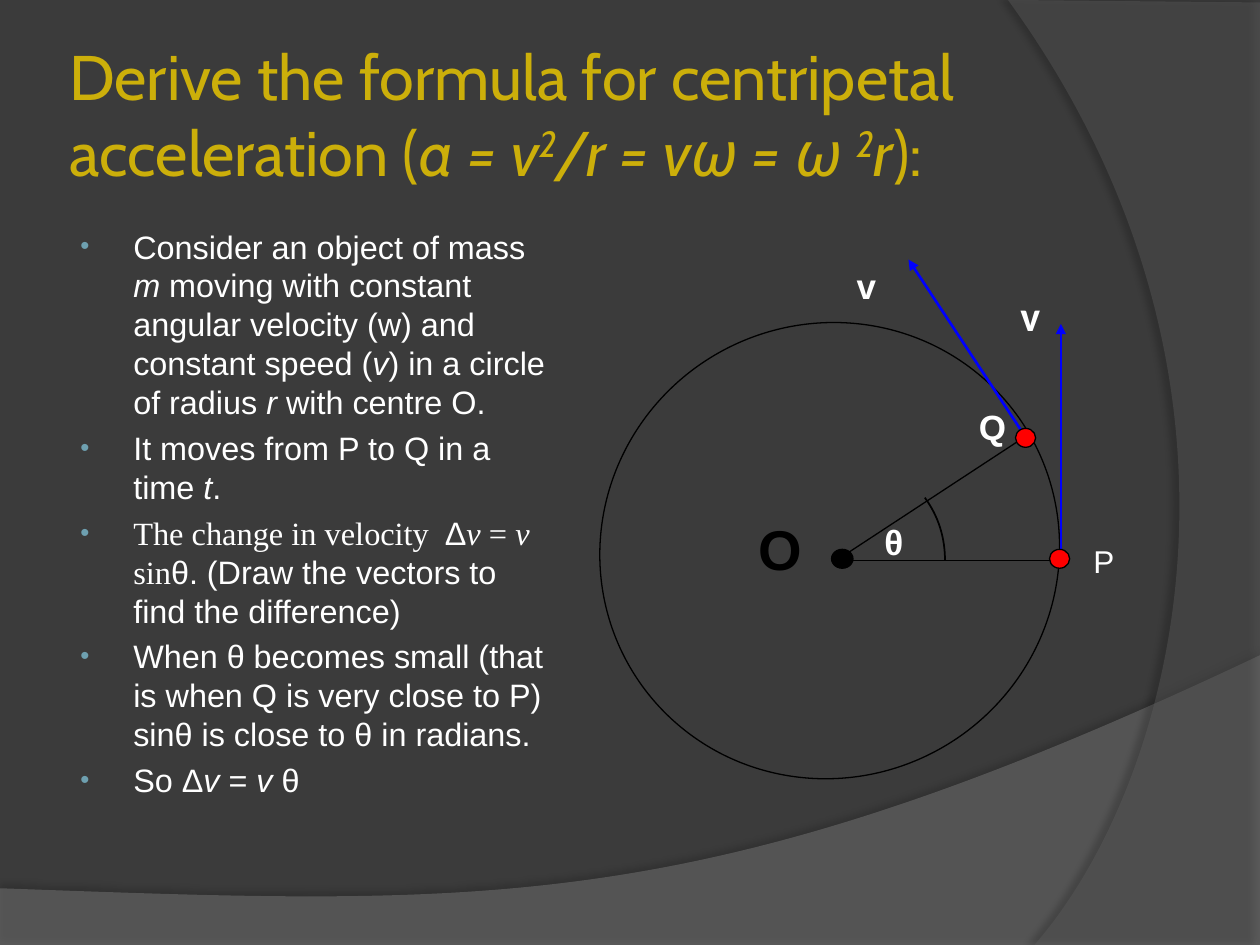
import dataclasses

import lxml.etree
import pptx
import pptx.dml.color
import pptx.enum.shapes
import pptx.enum.text
import pptx.oxml.ns
import pptx.util

Inches = pptx.util.Inches
Pt = pptx.util.Pt
RGBColor = pptx.dml.color.RGBColor

CHARCOAL = RGBColor(0x3B, 0x3B, 0x3B)
WAVE_GREY = RGBColor(0x7F, 0x7F, 0x7F)
SWEEP_GREY = RGBColor(0x5E, 0x5E, 0x5E)
GOLD = RGBColor(0xCC, 0xAF, 0x0A)
TEAL = RGBColor(0x6E, 0xA0, 0xB0)
WHITE = RGBColor(0xFF, 0xFF, 0xFF)
BLACK = RGBColor(0, 0, 0)
BLUE = RGBColor(0, 0, 0xFF)
RED = RGBColor(0xFF, 0, 0)

SANS, SERIF = "Arial", "Times New Roman"
TITLE = [
    ("Derive the formula for centripetal acceleration (", ""),
    ("a = v", "i"), ("2", "i^"), ("/r = vω = ω ", "i"), ("2", "i^"), ("r", "i"), ("):", ""),
]
BULLETS = [
    [("Consider an object of mass ", ""), ("m", "i"),
     (" moving with constant angular velocity (w) and constant speed (", ""), ("v", "i"),
     (") in a circle of radius ", ""), ("r", "i"), (" with centre O.", "")],
    [("It moves from P to Q in a time ", ""), ("t", "i"), (".", "")],
    [("The change in velocity  ", "s"), ("Δ", ""), ("v", "si"), (" = ", "s"), ("v ", "si"),
     ("sin", "s"), ("θ. (Draw the vectors to find the difference)", "")],
    [("When θ becomes small (that is when Q is very close to P) "
      "sinθ is close to θ in radians.", "")],
    [("So Δ", ""), ("v", "i"), (" = ", ""), ("v ", "i"), ("θ", "")],
]


@dataclasses.dataclass
class Box:
    """A region of the slide, in inches."""
    left: float
    top: float
    width: float
    height: float

    def point(self, x, y):
        """Return the slide position of an offset inside the region."""
        return Inches(self.left + x), Inches(self.top + y)

    def inner(self, x, y, width, height):
        """Return position and size of a part of the region."""
        return (*self.point(x, y), Inches(width), Inches(height))


def add_child(parent, tag, **attributes):
    """Append a DrawingML element to its parent."""
    return lxml.etree.SubElement(parent, pptx.oxml.ns.qn(tag), attributes)


def add_outline(shapes, box, corners, controls, close=True, pivot=None):
    """Draw a freeform whose last segment is a cubic curve; a pivot widens its frame."""
    builder = shapes.build_freeform(*box.point(*(pivot or corners[0])))
    if pivot:
        builder.move_to(*box.point(*corners[0]))
    builder.add_line_segments([box.point(*corner) for corner in corners[1:]], close=close)
    shape = builder.convert_to_shape()
    shape.shadow.inherit = False
    segment = shape._element.findall(".//" + pptx.oxml.ns.qn("a:lnTo"))[-1]
    segment.tag = pptx.oxml.ns.qn("a:cubicBezTo")
    for index, control in enumerate(controls):
        x, y = box.point(*control)
        knot = add_child(segment, "a:pt", x=str(x - shape.left), y=str(y - shape.top))
        segment.insert(index, knot)
    return shape


def add_band(page, box, corners, controls, colour, opacity, shadow_opacity, distance, direction):
    """Draw a translucent band with a soft shadow."""
    band = add_outline(page.shapes, box, corners, controls)
    band.line.fill.background()
    band.fill.solid()
    band.fill.fore_color.rgb = colour
    properties = band._element.spPr
    fill = properties.find(".//" + pptx.oxml.ns.qn("a:srgbClr"))
    add_child(fill, "a:alpha", val=str(opacity * 1000))
    effects = properties.find(pptx.oxml.ns.qn("a:effectLst"))
    shadow = add_child(effects, "a:outerShdw", blurRad=str(Pt(4)), dist=str(Pt(distance)),
                       dir=str(direction * 60000), algn="ctr", rotWithShape="0")
    shade = add_child(shadow, "a:srgbClr", val=str(BLACK))
    add_child(shade, "a:alpha", val=str(shadow_opacity * 1000))


def add_backdrop(page, box):
    """Draw the background with its wave and its sweep."""
    page.background.fill.solid()
    page.background.fill.fore_color.rgb = CHARCOAL
    add_band(page, Box(box.left, box.top + 5.2, box.width, 2.31),
             [(0, 1.85), (0, 2.31), (10, 2.31), (10, 0), (0, 1.85)],
             [(5.59, 2.09), (3.91, 1.99)], WAVE_GREY, 45, 35, 3.5, 270)
    add_band(page, Box(box.left + 8, box.top, 2, box.height),
             [(0, 0), (2, 0.02), (2, 7.5), (0.21, 7.5), (0, 0)],
             [(1.35, 6.19), (2.18, 3)], SWEEP_GREY, 40, 45, 4, 180)


def add_run(para, text, font, size, colour, bold=False, marks=""):
    """Add a run; marks are i for italic, s for serif, ^ for superscript."""
    span = para.add_run()
    span.text = text
    span.font.name = SERIF if "s" in marks else font
    span.font.size = Pt(size)
    span.font.color.rgb = colour
    span.font.bold = bold
    span.font.italic = "i" in marks
    if "^" in marks:
        span._r.get_or_add_rPr().set("baseline", "30000")


def add_title(page, box):
    """Place and fill the title above the backdrop."""
    title = page.shapes.title
    page.shapes._spTree.append(title._element)
    title.left, title.top, title.width, title.height = box.inner(0, 0, box.width, box.height)
    frame = title.text_frame
    frame.word_wrap = True
    frame.vertical_anchor = pptx.enum.text.MSO_ANCHOR.BOTTOM
    frame.margin_left = frame.margin_right = frame.margin_top = frame.margin_bottom = Inches(0.05)
    para = frame.paragraphs[0]
    para.alignment = pptx.enum.text.PP_ALIGN.LEFT
    for text, marks in TITLE:
        add_run(para, text, "Cabin", 36, GOLD, marks=marks)


def add_bullets(page, box):
    """Write the bulleted derivation."""
    frame = page.shapes.add_textbox(*box.inner(0, 0, box.width, box.height)).text_frame
    frame.word_wrap = True
    for index, spans in enumerate(BULLETS):
        para = frame.add_paragraph() if index else frame.paragraphs[0]
        para.space_before = Pt(4)
        properties = para._p.get_or_add_pPr()
        properties.set("marL", str(Inches(0.46)))
        properties.set("indent", str(Inches(-0.42)))
        add_child(add_child(properties, "a:buClr"), "a:srgbClr", val=str(TEAL))
        add_child(properties, "a:buSzPct", val="80000")
        add_child(properties, "a:buFont", typeface=SANS)
        add_child(properties, "a:buChar", char="•")
        for text, marks in spans:
            add_run(para, text, SANS, 18.5, WHITE, marks=marks)


def add_ellipse(shapes, bounds, fill=None):
    """Draw a thin black ellipse, filled or open."""
    shape = shapes.add_shape(pptx.enum.shapes.MSO_SHAPE.OVAL, *bounds)
    shape.shadow.inherit = False
    shape.line.color.rgb = BLACK
    shape.line.width = Pt(0.75)
    if fill is None:
        shape.fill.background()
    else:
        shape.fill.solid()
        shape.fill.fore_color.rgb = fill
    return shape


def add_line(shapes, start, end, colour=BLACK, width=0.75, arrow=False):
    """Draw a straight line, with an arrowhead at its end if asked."""
    line = shapes.add_connector(pptx.enum.shapes.MSO_CONNECTOR.STRAIGHT, *start, *end)
    line.line.color.rgb = colour
    line.line.width = Pt(width)
    if arrow:
        add_child(line.line._get_or_add_ln(), "a:tailEnd", type="triangle")
    add_child(line._element.spPr, "a:effectLst")


def add_label(shapes, bounds, text, size, font=SANS, colour=WHITE, bold=True):
    """Write one letter of the diagram."""
    frame = shapes.add_textbox(*bounds).text_frame
    frame.word_wrap = True
    add_run(frame.paragraphs[0], text, font, size, colour, bold)
    return frame


def add_diagram(page, box):
    """Draw the circular motion from P to Q around O."""
    shapes = page.shapes.add_group_shape().shapes
    add_ellipse(shapes, box.inner(1.85, 2.31, 0.17, 0.15), BLACK)
    add_line(shapes, box.point(1.93, 2.4), box.point(3.67, 2.4))
    add_ellipse(shapes, box.inner(0, 0.52, 3.67, 3.6)).rotation = 326.6
    add_line(shapes, box.point(1.9, 2.39), box.point(3.41, 1.4))
    for start, end in (((3.39, 1.42), (2.46, 0.01)), ((3.67, 2.4), (3.67, 0.52))):
        add_line(shapes, box.point(*start), box.point(*end), BLUE, 1.5, True)
    centre = add_label(shapes, box.inner(1.17, 2.03, 0.67, 0.55), "O", 32, colour=BLACK)
    centre.margin_top = centre.margin_bottom = 0
    centre.paragraphs[0].space_before = Pt(6)
    add_label(shapes, box.inner(2.92, 1.12, 0.58, 0.55), "Q", 20)
    add_label(shapes, box.inner(1.95, 0, 0.67, 0.55), "v", 20)
    add_label(shapes, box.inner(3.25, 0.2, 0.74, 0.52), "v", 24, "Calibri")
    add_label(shapes, box.inner(2.17, 2.03, 0.65, 0.58), "θ", 20)
    for x, y in ((3.58, 2.31), (3.31, 1.35)):
        add_ellipse(shapes, box.inner(x, y, 0.16, 0.15), RED)
    arc = add_outline(shapes, box, [(2.59, 1.9), (2.75, 2.4)], [(2.7, 2.05), (2.75, 2.22)],
                      close=False, pivot=(1.87, 2.4))
    arc.fill.background()
    arc.line.color.rgb = BLACK
    arc.line.width = Pt(1)
    add_label(page.shapes, box.inner(3.83, 2.2, 0.5, 0.4), "P", 18, bold=False)


def main():
    """Build the slide and save it."""
    deck = pptx.Presentation()
    deck.slide_width, deck.slide_height = Inches(10), Inches(7.5)
    page = deck.slides.add_slide(deck.slide_layouts[5])
    add_backdrop(page, Box(0, 0, 10, 7.5))
    add_title(page, Box(0.5, 0.3, 8.17, 1.25))
    add_bullets(page, Box(0.5, 1.75, 4, 4.95))
    add_diagram(page, Box(4.75, 2.05, 4.33, 4.12))
    deck.save("out.pptx")


if __name__ == "__main__":
    main()
